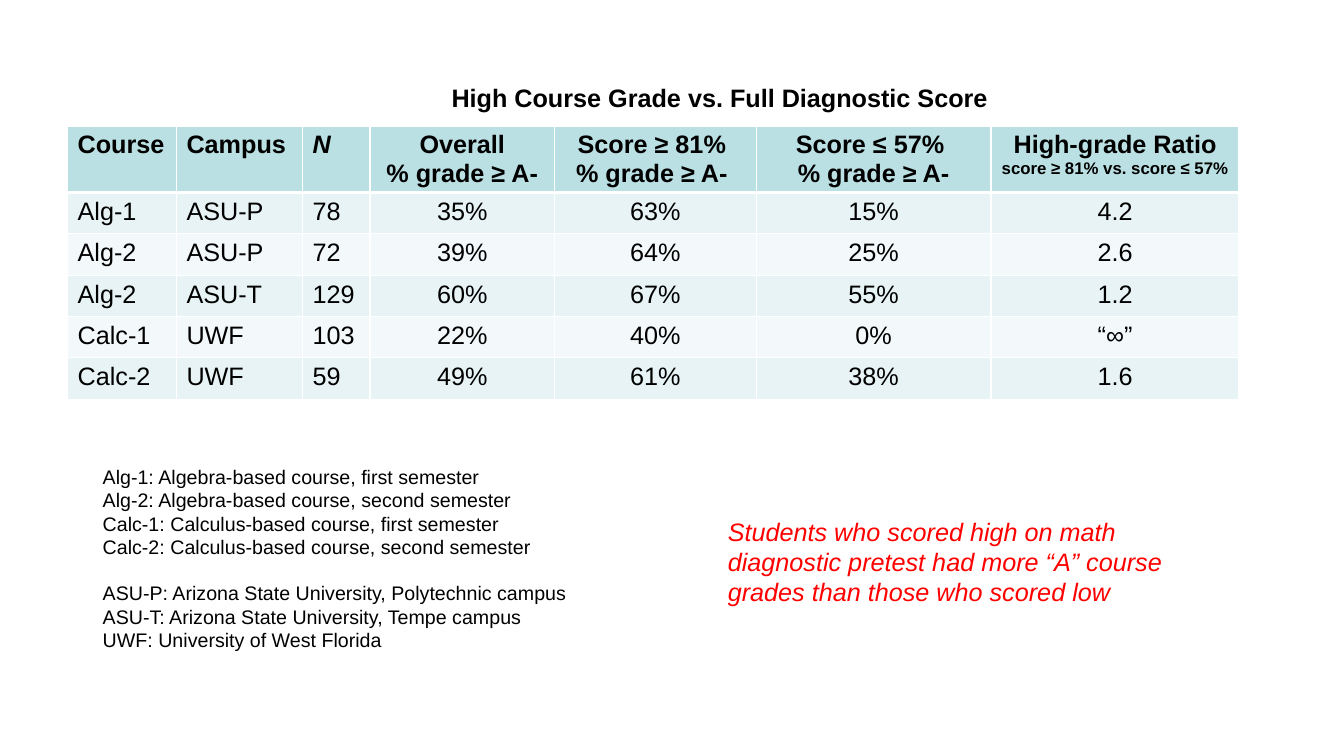
from lxml.etree import SubElement
from pptx import Presentation
from pptx.dml.color import RGBColor
from pptx.enum.text import PP_ALIGN
from pptx.oxml.ns import qn
from pptx.util import Inches, Pt

BLACK, WHITE, RED = "000000", "FFFFFF", "FF0000"
HEADER_FILL, BAND_FILLS = "BBE0E3", ("E7F3F4", "F3F9FA")

COL_WIDTHS = (1.08, 1.25, 0.67, 1.83, 2, 2.33, 2.46)
HEADER_HEIGHT, ROW_HEIGHT = 0.65, 0.41
LEFT_COLS = 3  # Course, Campus and N are left-aligned

# Each header cell is a list of paragraphs, each a list of (text, size) runs
HEADERS = (
    [[("Course", 18)]],
    [[("Campus", 18)]],
    [[("N", 18)]],
    [[("Overall", 18)], [("% grade ≥ A-", 18)]],
    [[("Score ≥ 81% ", 18)], [("% grade ≥ A- ", 18)]],
    [[("Score ≤ 57% ", 18)], [("% grade ≥ A-", 18)]],
    [[("High-grade Ratio", 18), (" score ≥ 81% vs. score ≤ 57% ", 12)]],
)
ROWS = (
    ("Alg-1", "ASU-P", "78", "35%", "63%", "15%", "4.2"),
    ("Alg-2", "ASU-P", "72", "39%", "64%", "25%", "2.6"),
    ("Alg-2", "ASU-T", "129", "60%", "67%", "55%", "1.2"),
    ("Calc-1", "UWF", "103", "22%", "40%", "0%", "“∞”"),
    ("Calc-2", "UWF", "59", "49%", "61%", "38%", "1.6"),
)
COURSES = (
    "Alg-1: Algebra-based course, first semester",
    "Alg-2: Algebra-based course, second semester",
    "Calc-1: Calculus-based course, first semester",
    "Calc-2: Calculus-based course, second semester",
)
CAMPUSES = (
    "ASU-P: Arizona State University, Polytechnic campus",
    "ASU-T: Arizona State University, Tempe campus",
    "UWF: University of West Florida",
)


def rgb(color):
    return RGBColor.from_string(color)


def add_run(p, text, size, color=BLACK, bold=False, italic=False):
    r = p.add_run()
    r.text = text
    font = r.font
    font.name, font.size = "Arial", Pt(size)
    font.bold, font.italic = bold, italic
    font.color.rgb = rgb(color)


def next_paragraph(tf, index):
    return tf.paragraphs[0] if index == 0 else tf.add_paragraph()


def set_borders(cell, bottom):
    tcPr = cell._tc.get_or_add_tcPr()
    for side, width in (("L", 1), ("R", 1), ("T", 1), ("B", bottom)):
        ln = SubElement(tcPr, qn(f"a:ln{side}"), w=str(Pt(width)))
        fill = SubElement(ln, qn("a:solidFill"))
        SubElement(fill, qn("a:srgbClr"), val=WHITE)


def fill_cell(cell, paragraphs, fill, centered, bottom=1, **style):
    set_borders(cell, bottom)
    cell.fill.solid()
    cell.fill.fore_color.rgb = rgb(fill)
    for i, runs in enumerate(paragraphs):
        p = next_paragraph(cell.text_frame, i)
        p.alignment = PP_ALIGN.CENTER if centered else PP_ALIGN.LEFT
        for text, size in runs:
            add_run(p, text, size, **style)


def add_grade_table(s, left, top):
    height = HEADER_HEIGHT + ROW_HEIGHT * len(ROWS)
    table = s.shapes.add_table(
        len(ROWS) + 1, len(COL_WIDTHS), Inches(left), Inches(top),
        Inches(sum(COL_WIDTHS)), Inches(height)).table
    for column, width in zip(table.columns, COL_WIDTHS):
        column.width = Inches(width)
    for i, row in enumerate(table.rows):
        row.height = Inches(ROW_HEIGHT if i else HEADER_HEIGHT)

    # Header row
    for c, paragraphs in enumerate(HEADERS):
        fill_cell(table.cell(0, c), paragraphs, HEADER_FILL, c >= LEFT_COLS,
                  bottom=3, bold=True, italic=paragraphs[0][0][0] == "N")
    # Banded body rows
    for i, values in enumerate(ROWS):
        for c, value in enumerate(values):
            fill_cell(table.cell(i + 1, c), [[(value, 18)]],
                      BAND_FILLS[i % 2], c >= LEFT_COLS)


def add_text(s, left, top, width, height, lines, size, **style):
    sp = s.shapes.add_textbox(Inches(left), Inches(top),
                              Inches(width), Inches(height))
    tf = sp.text_frame
    tf.word_wrap = True
    for i, line in enumerate(lines):
        add_run(next_paragraph(tf, i), line, size, **style)
    return tf


def main():
    prs = Presentation()
    prs.slide_width, prs.slide_height = Inches(13.33), Inches(7.5)
    s = prs.slides.add_slide(prs.slide_layouts[6])

    # Grade table
    add_grade_table(s, 0.67, 1.25)

    # Legend, with a gap between courses and campuses
    tf = add_text(s, 0.92, 4.56, 6.25, 2.62, COURSES + CAMPUSES, 14)
    tf.paragraphs[len(COURSES)].space_before = Pt(16)

    # Finding
    add_text(s, 7.12, 5.07, 4.92, 1.01,
             ["Students who scored high on math diagnostic pretest had more "
              "“A” course grades than those who scored low"],
             18, color=RED, italic=True)

    # Table title
    add_text(s, 4.38, 0.77, 5.58, 0.42,
             ["High Course Grade vs. Full Diagnostic Score"], 18, bold=True)

    prs.save("out.pptx")


if __name__ == "__main__":
    main()
